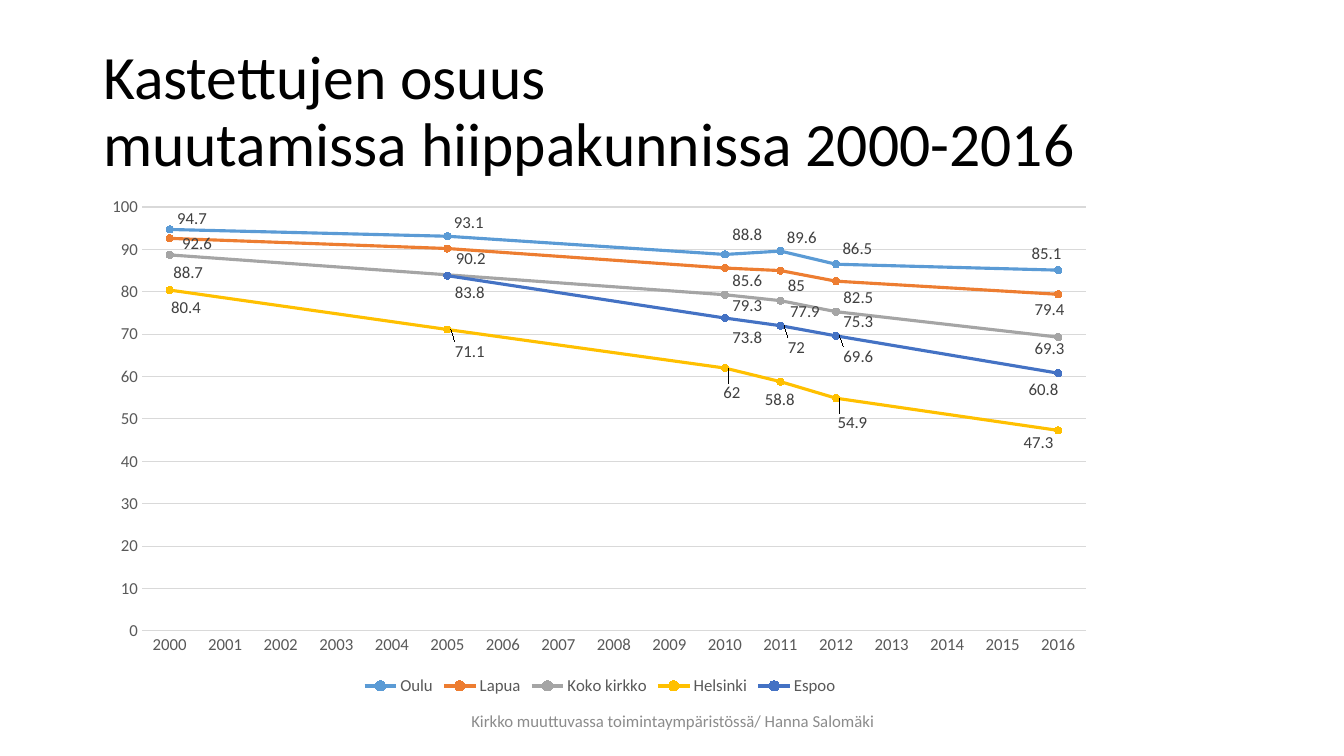
from lxml.etree import SubElement
from pptx import Presentation
from pptx.chart.data import CategoryChartData
from pptx.dml.color import RGBColor
from pptx.enum.chart import (XL_CHART_TYPE, XL_LABEL_POSITION, XL_LEGEND_POSITION,
                             XL_MARKER_STYLE, XL_TICK_MARK)
from pptx.enum.text import MSO_ANCHOR, MSO_AUTO_SIZE, PP_ALIGN
from pptx.oxml import parse_xml
from pptx.oxml.ns import nsdecls, qn
from pptx.util import Emu, Pt

EMU_PER_PX = 914400 / 100.8
CHART_BOX = (93, 186, 1014, 514)
PLOT_BOX = (49, 21, 944, 424)  # inside the chart
YEARS = range(2000, 2017)

# Per diocese: colour, then year: (share, label shift right, label shift down) in px
DIOCESES = {
    "Oulu": ("5B9BD5", {2000: (94.7, 0, -11), 2005: (93.1, -1, -14), 2010: (88.8, 0, -20),
                        2011: (89.6, -1, -13), 2012: (86.5, -1, -16), 2016: (85.1, -34, -16)}),
    "Lapua": ("ED7D31", {2000: (92.6, 5, 5), 2005: (90.2, 1, 10), 2010: (85.6, 0, 13),
                         2011: (85, 0, 15), 2012: (82.5, 0, 17), 2016: (79.4, -31, 15)}),
    "Koko kirkko": ("A5A5A5", {2000: (88.7, -4, 18), 2010: (79.3, 0, 11), 2011: (77.9, 2, 11),
                               2012: (75.3, 0, 10), 2016: (69.3, -31, 12)}),
    "Helsinki": ("FFC000", {2000: (80.4, -6, 18), 2005: (71.1, 0, 22), 2010: (62, -9, 25),
                            2011: (58.8, -23, 18), 2012: (54.9, -6, 25), 2016: (47.3, -42, 12)}),
    "Espoo": ("4472C4", {2005: (83.8, 0, 17), 2010: (73.8, 0, 20), 2011: (72, 0, 22),
                         2012: (69.6, 0, 21), 2016: (60.8, -37, 17)}),
}


def px(*lengths):
    return [Emu(round(length * EMU_PER_PX)) for length in lengths]


def set_font(font, size, colour):
    for name, value in {"name": "Calibri", "size": Pt(size), "bold": False}.items():
        setattr(font, name, value)
    font.color.rgb = RGBColor.from_string(colour)


deck = Presentation()
deck.slide_width, deck.slide_height = px(1344, 756)
page = deck.slides.add_slide(deck.slide_layouts[5])

# Title and footer
title = page.shapes.title
title.left, title.top, title.width, title.height = px(93, 40, 1159, 146)
footer = page.shapes.add_textbox(*px(446, 701, 454, 40))
texts = [
    (title, "Kastettujen osuus\vmuutamissa hiippakunnissa 2000-2016", 44, "000000", PP_ALIGN.LEFT, 0.9),
    (footer, "Kirkko muuttuvassa toimintaympäristössä/ Hanna Salomäki", 12, "8C8C8C", PP_ALIGN.CENTER, 1.0),
]
for box, text, size, colour, alignment, spacing in texts:
    frame = box.text_frame
    frame.text = text
    frame_format = {"word_wrap": True, "auto_size": MSO_AUTO_SIZE.NONE,
                    "vertical_anchor": MSO_ANCHOR.MIDDLE}
    for name, value in frame_format.items():
        setattr(frame, name, value)
    para = frame.paragraphs[0]
    para.alignment, para.line_spacing = alignment, spacing
    for span in para.runs:
        set_font(span.font, size, colour)

# Chart data
data = CategoryChartData()
data.categories = [str(year) for year in YEARS]
for diocese, (colour, shares) in DIOCESES.items():
    data.add_series(diocese, [shares[year][0] if year in shares else None for year in YEARS])
chart = page.shapes.add_chart(XL_CHART_TYPE.LINE_MARKERS, *px(*CHART_BOX), data).chart
chart.has_title = False
set_font(chart.font, 10, "000000")

# Lines run across missing years, and the plot area has a fixed place
chart_xml = chart._chartSpace.chart
chart_xml.find(qn("c:dispBlanksAs")).set("val", "span")
plot_xml = chart_xml.plotArea
for old_layout in plot_xml.findall(qn("c:layout")):
    plot_xml.remove(old_layout)
plot_layout = parse_xml(f"<c:layout {nsdecls('c')}><c:manualLayout/></c:layout>")
settings = {"layoutTarget": "inner", "xMode": "edge", "yMode": "edge"}
for index, side in enumerate("xywh"):
    settings[side] = round(PLOT_BOX[index] / CHART_BOX[2 + index % 2], 4)
for name, value in settings.items():
    SubElement(plot_layout[0], qn(f"c:{name}")).set("val", str(value))
plot_xml.insert(0, plot_layout)

# Axes and legend
value_axis, year_axis = chart.value_axis, chart.category_axis
for name, value in {"minimum_scale": 0, "maximum_scale": 100, "major_unit": 10,
                    "has_major_gridlines": True}.items():
    setattr(value_axis, name, value)
for axis in (value_axis, year_axis):
    axis.major_tick_mark = axis.minor_tick_mark = XL_TICK_MARK.NONE
    set_font(axis.tick_labels.font, 12, "595959")
value_axis.format.line.fill.background()
for line in (value_axis.major_gridlines.format.line, year_axis.format.line):
    line.color.rgb = RGBColor.from_string("D9D9D9")
    line.width = Pt(0.75)
chart.has_legend = True
chart.legend.position = XL_LEGEND_POSITION.BOTTOM
chart.legend.include_in_layout = False
set_font(chart.legend.font, 12, "595959")

# Series lines, markers and shifted labels
for series, (colour, shares) in zip(chart.plots[0].series, DIOCESES.values()):
    rgb = RGBColor.from_string(colour)
    series.smooth = False
    series.format.line.color.rgb = rgb
    series.format.line.width = Pt(2.25)
    series.marker.style = XL_MARKER_STYLE.CIRCLE
    series.marker.size = 5
    series.marker.format.fill.solid()
    series.marker.format.fill.fore_color.rgb = rgb
    series.marker.format.line.color.rgb = rgb
    series.data_labels.show_value = True
    set_font(series.data_labels.font, 12, "404040")
    for year in shares:
        label = series.points[year - YEARS[0]].data_label
        set_font(label.font, 12, "404040")
        label.position = XL_LABEL_POSITION.RIGHT
    for label_xml, (share, right, down) in zip(series._element.xpath(".//c:dLbl"), shares.values()):
        label_layout = parse_xml(f"<c:layout {nsdecls('c')}><c:manualLayout/></c:layout>")
        for side, shift, extent in (("x", right, CHART_BOX[2]), ("y", down, CHART_BOX[3])):
            SubElement(label_layout[0], qn(f"c:{side}")).set("val", str(round(shift / extent, 4)))
        label_xml.insert(1, label_layout)

deck.save("out.pptx")
